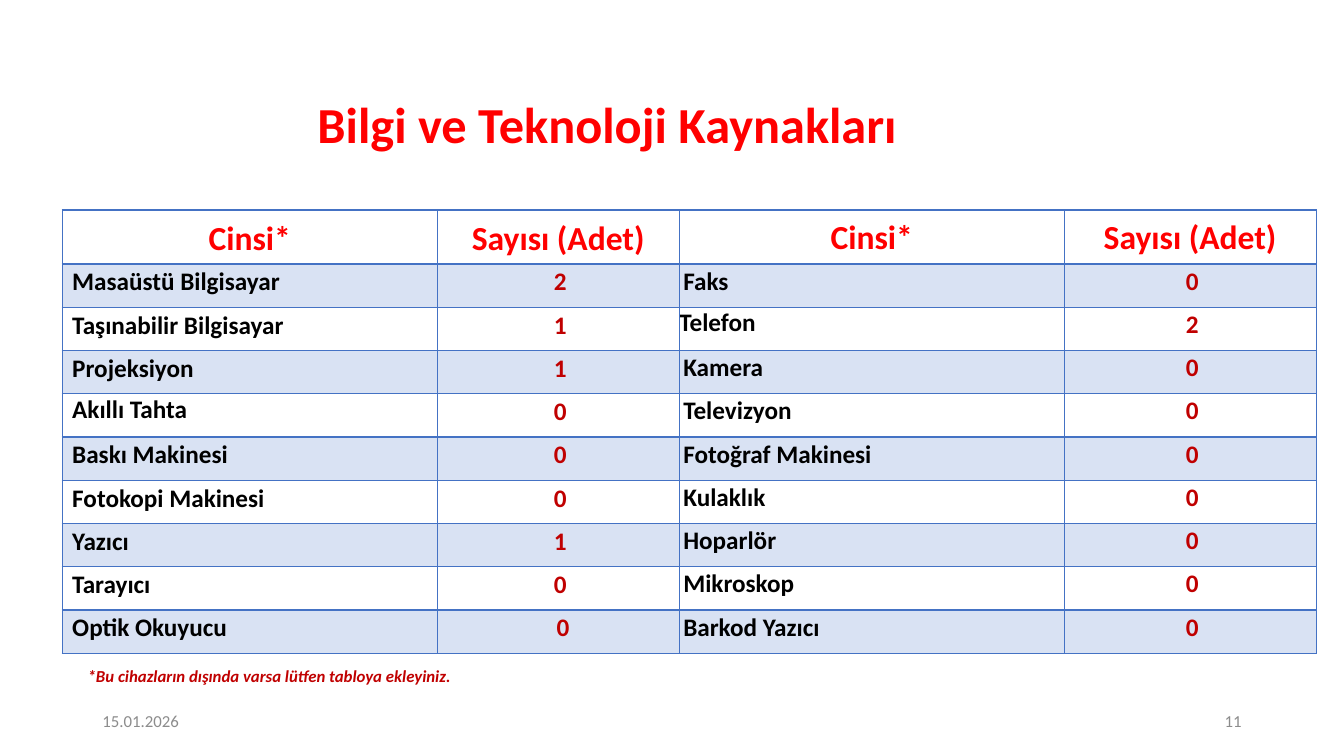
from lxml import etree
from pptx import Presentation
from pptx.dml.color import RGBColor
from pptx.enum import text
from pptx.oxml import ns
from pptx.util import Cm, Pt

RED = RGBColor(0xFF, 0x00, 0x00)
DARK_RED = RGBColor(0xC0, 0x00, 0x00)
BLACK = RGBColor(0x00, 0x00, 0x00)
GREY = RGBColor(0x8C, 0x8C, 0x8C)
BLUE = RGBColor(0x44, 0x72, 0xC4)

FONT = "Calibri"
LEFT, CENTER, RIGHT = (text.PP_ALIGN.LEFT, text.PP_ALIGN.CENTER,
                       text.PP_ALIGN.RIGHT)
MIDDLE, TOP = text.MSO_ANCHOR.MIDDLE, text.MSO_ANCHOR.TOP

HEADINGS = ("Cinsi*", "Sayısı (Adet)") * 2
DEVICES = [
    ("Masaüstü Bilgisayar", "2", "Faks", "0"),
    ("Taşınabilir Bilgisayar", "1", "Telefon", "2"),
    ("Projeksiyon", "1", "Kamera", "0"),
    ("Akıllı Tahta", "0", "Televizyon", "0"),
    ("Baskı Makinesi", "0", "Fotoğraf Makinesi", "0"),
    ("Fotokopi Makinesi", "0", "Kulaklık", "0"),
    ("Yazıcı", "1", "Hoparlör", "0"),
    ("Tarayıcı", "0", "Mikroskop", "0"),
    ("Optik Okuyucu", " 0", "Barkod Yazıcı", "0"),
]
TIGHT = ("Telefon", "Akıllı Tahta")  # set without paragraph spacing
COLUMN_WIDTHS = (9.45, 6.1, 9.7, 6.35)
HEADER_HEIGHT, ROW_HEIGHT = 1.36, 1.09


def write(frame, words, size, color, bold=False, italic=False, align=LEFT,
          line_spacing=None, space_after=None, indent=0):
    para = frame.paragraphs[0]
    para.alignment = align
    if line_spacing:
        para.line_spacing = line_spacing
    if space_after:
        para.space_after = Pt(space_after)
    if indent:
        properties = para._p.get_or_add_pPr()
        properties.set("marL", str(Cm(indent)))
        properties.set("indent", "0")
    span = para.add_run()
    span.text = words
    font = span.font
    font.name, font.size, font.bold, font.italic = FONT, Pt(size), bold, italic
    font.color.rgb = color


def add_text(page, box, words, size, color, anchor=MIDDLE, **style):
    frame = page.shapes.add_textbox(*map(Cm, box)).text_frame
    frame.word_wrap = True
    frame.vertical_anchor = anchor
    write(frame, words, size, color, **style)


def tint(cell):
    """Fill a cell with blue at 20% opacity."""
    cell.fill.solid()
    cell.fill.fore_color.rgb = BLUE
    color = cell._tc.tcPr.find(".//" + ns.qn("a:srgbClr"))
    etree.SubElement(color, ns.qn("a:alpha"), val="20000")


def add_borders(cell, top, bottom):
    sides = (("L", 1), ("R", 1), ("T", top), ("B", bottom))
    for position, (side, width) in enumerate(sides):
        line = etree.Element(ns.qn("a:ln" + side), w=str(Pt(width)))
        fill = etree.SubElement(line, ns.qn("a:solidFill"))
        etree.SubElement(fill, ns.qn("a:srgbClr"), val=str(BLUE))
        cell._tc.get_or_add_tcPr().insert(position, line)


def format_cell(cell, row, column, words):
    # Margins: the left half is padded, the right half is not
    side, top = (0.15, 0.02) if column < 2 else (0, 0)
    cell.margin_left = cell.margin_right = Cm(side)
    cell.margin_top, cell.margin_bottom = Cm(top), 0

    # Fill and borders
    if row % 2:
        tint(cell)
    else:
        cell.fill.background()
    add_borders(cell, top=2 if row == 1 else 1, bottom=2 if row == 0 else 1)

    # Text
    spacing = {} if words in TIGHT else dict(line_spacing=1.07, space_after=8)
    if row == 0:
        cell.vertical_anchor = MIDDLE
        write(cell.text_frame, words, 24, RED, bold=True, align=CENTER,
              **spacing)
    else:
        is_count = column % 2
        cell.vertical_anchor = TOP
        write(cell.text_frame, words, 18, DARK_RED if is_count else BLACK,
              bold=True, align=CENTER if is_count else LEFT,
              indent=0 if words == "Telefon" else 0.1, **spacing)


def add_device_table(page, left, top):
    rows = [HEADINGS, *DEVICES]
    height = HEADER_HEIGHT + ROW_HEIGHT * len(DEVICES)
    table = page.shapes.add_table(
        len(rows), len(HEADINGS), Cm(left), Cm(top),
        Cm(sum(COLUMN_WIDTHS)), Cm(height)).table
    table.first_row = table.horz_banding = False
    for column, width in zip(table.columns, COLUMN_WIDTHS):
        column.width = Cm(width)
    for row, entries in enumerate(rows):
        table.rows[row].height = Cm(ROW_HEIGHT if row else HEADER_HEIGHT)
        for column, words in enumerate(entries):
            format_cell(table.cell(row, column), row, column, words)


def add_footer(page, left, top, width, height):
    part = 7.62
    add_text(page, (left, top, part, height), "15.01.2026", 12, GREY)
    add_text(page, (left + width - part, top, part, height), "11", 12, GREY,
             align=RIGHT)


def main():
    deck = Presentation()
    deck.slide_width, deck.slide_height = Cm(33.87), Cm(19.05)
    page = deck.slides.add_slide(deck.slide_layouts[6])

    # Title
    add_text(page, (0.74, 2.16, 29.13, 2.11), "Bilgi ve Teknoloji Kaynakları",
             36, RED, bold=True, align=CENTER, line_spacing=0.9)
    # Devices
    add_device_table(page, left=1.57, top=5.29)
    # Footer and note
    add_footer(page, 2.33, 17.65, 29.21, 1.02)
    add_text(page, (1.96, 16.66, 12.7, 0.76),
             "*Bu cihazların dışında varsa lütfen tabloya ekleyiniz.",
             12, DARK_RED, anchor=TOP, bold=True, italic=True)

    deck.save("out.pptx")


if __name__ == "__main__":
    main()
